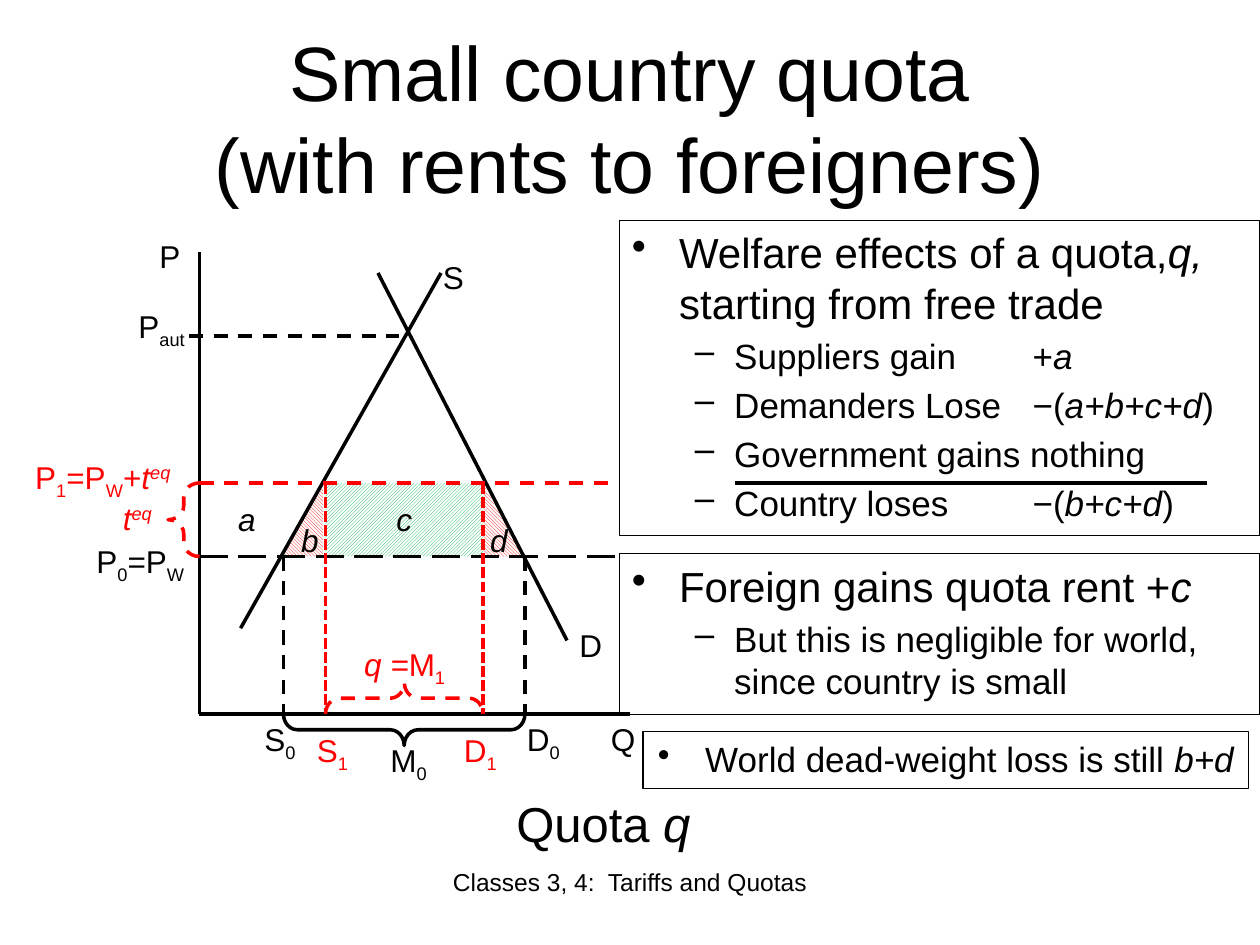
from lxml.etree import SubElement
from pptx import Presentation
from pptx.dml.color import RGBColor
from pptx.enum.dml import MSO_LINE, MSO_PATTERN
from pptx.enum.shapes import MSO_CONNECTOR, MSO_SHAPE
from pptx.enum.text import MSO_ANCHOR, MSO_AUTO_SIZE, PP_ALIGN
from pptx.oxml.ns import qn
from pptx.util import Pt

BLACK, RED, GREEN, WHITE = "000000", "FF0000", "00B050", "FFFFFF"
FONT = "Arial"

# Diagram coordinates in points
AXIS_X, AXIS_Y = 114, 408
P_AUTARKY, P_QUOTA, P_WORLD = 192, 276, 318
S0, S1, D1, D0 = 162, 186, 276, 300

BASELINES = {"sub": "-25000", "sup": "30000"}


def colour(value):
    return RGBColor.from_string(value)


def format_paragraph(para, size, ink=BLACK, align=PP_ALIGN.LEFT):
    para.alignment = align
    para.font.name = FONT
    para.font.size = Pt(size)
    para.font.color.rgb = colour(ink)


def add_spans(para, spans):
    """Each span is plain text or (text, styles), styles being i, sub, sup."""
    for item in spans:
        text, styles = (item, "") if isinstance(item, str) else item
        span = para.add_run()
        span.text = text
        for style in styles.split():
            if style == "i":
                span.font.italic = True
            else:
                span._r.get_or_add_rPr().set("baseline", BASELINES[style])


def add_label(page, left, top, width, spans, ink=BLACK, size=18, align=PP_ALIGN.LEFT):
    box = page.shapes.add_textbox(Pt(left), Pt(top), Pt(width), Pt(size * 1.6))
    box.text_frame.word_wrap = True
    para = box.text_frame.paragraphs[0]
    format_paragraph(para, size, ink, align)
    add_spans(para, spans)


def add_line(page, x1, y1, x2, y2, ink=BLACK, dash=None):
    line = page.shapes.add_connector(MSO_CONNECTOR.STRAIGHT, Pt(x1), Pt(y1), Pt(x2), Pt(y2))
    line.line.color.rgb = colour(ink)
    line.line.width = Pt(2)
    if dash:
        line.line.dash_style = dash
    SubElement(line._element.spPr, qn("a:effectLst"))


def add_hatched(page, kind, left, width, ink, pattern, flip=False):
    """Welfare area between the world price and the quota price."""
    area = page.shapes.add_shape(kind, Pt(left), Pt(P_QUOTA), Pt(width), Pt(P_WORLD - P_QUOTA))
    area.shadow.inherit = False
    area.fill.patterned()
    area.fill.pattern = pattern
    area.fill.fore_color.rgb = colour(ink)
    area.fill.back_color.rgb = colour(WHITE)
    area.line.fill.background()
    if flip:
        area._element.spPr.find(qn("a:xfrm")).set("flipH", "1")


def add_brace(page, centre_x, centre_y, span, rotation=0, ink=BLACK, dash=None):
    depth = 18
    brace = page.shapes.add_shape(MSO_SHAPE.LEFT_BRACE, Pt(centre_x - depth / 2),
                                  Pt(centre_y - span / 2), Pt(depth), Pt(span))
    brace.shadow.inherit = False
    brace.rotation = rotation
    brace.adjustments[0] = 0.44
    brace.fill.background()
    brace.line.color.rgb = colour(ink)
    brace.line.width = Pt(2)
    if dash:
        brace.line.dash_style = dash


def set_bullet(para, level):
    margin, hang, mark = ((27, 27, "•"), (58.5, 22.5, "–"))[level]
    properties = para._p.get_or_add_pPr()
    properties.set("marL", str(Pt(margin)))
    properties.set("indent", str(-Pt(hang)))
    bullet = properties.makeelement(qn("a:buChar"), {"char": mark})
    tabs = properties.makeelement(qn("a:tabLst"), {})
    SubElement(tabs, qn("a:tab"), pos=str(Pt(229)), algn="l")
    # Schema order: bullet and tabs come before the default run properties
    defaults = properties.find(qn("a:defRPr"))
    defaults.addprevious(bullet)
    defaults.addprevious(tabs)


def add_bullet_box(page, left, top, width, height, items, align=PP_ALIGN.LEFT):
    """Items are (level, size, spans)."""
    box = page.shapes.add_textbox(Pt(left), Pt(top), Pt(width), Pt(height))
    box.line.color.rgb = colour(BLACK)
    box.line.width = Pt(0.75)
    frame = box.text_frame
    frame.word_wrap = True
    for index, (level, size, spans) in enumerate(items):
        para = frame.add_paragraph() if index else frame.paragraphs[0]
        para.level = level
        para.space_before = Pt(size * 0.2)
        format_paragraph(para, size, align=align)
        set_bullet(para, level)
        add_spans(para, spans)


def add_title(page):
    title = page.shapes.title
    title.left, title.top, title.width, title.height = Pt(36), Pt(21.6), Pt(648), Pt(90)
    frame = title.text_frame
    frame.text = "Small country quota\v(with rents to foreigners)"
    frame.auto_size = MSO_AUTO_SIZE.NONE
    frame.vertical_anchor = MSO_ANCHOR.MIDDLE
    format_paragraph(frame.paragraphs[0], 44, align=PP_ALIGN.CENTER)


def draw_diagram(page):
    # Hatched welfare areas
    down, up = MSO_PATTERN.DARK_DOWNWARD_DIAGONAL, MSO_PATTERN.DARK_UPWARD_DIAGONAL
    add_hatched(page, MSO_SHAPE.RECTANGLE, S1, D1 - S1, GREEN, up)
    add_hatched(page, MSO_SHAPE.RIGHT_TRIANGLE, D1, 22.5, RED, down)
    add_hatched(page, MSO_SHAPE.RIGHT_TRIANGLE, S0, 22.5, RED, down, flip=True)

    # Axes, supply and demand
    add_line(page, AXIS_X, AXIS_Y, 360, AXIS_Y)
    add_line(page, AXIS_X, AXIS_Y, AXIS_X, 144)
    add_line(page, 137.5, 359, 252, 156)
    add_line(page, 324, 366, 216, 156)

    # Price and quantity guides
    add_line(page, 108, P_AUTARKY, 228, P_AUTARKY, dash=MSO_LINE.DASH)
    add_line(page, AXIS_X, P_WORLD, 354, P_WORLD, dash=MSO_LINE.LONG_DASH)
    add_line(page, AXIS_X, P_QUOTA, 348, P_QUOTA, RED, MSO_LINE.DASH)
    for x in (S0, D0):
        add_line(page, x, P_WORLD, x, AXIS_Y, dash=MSO_LINE.DASH)
    for x in (S1, D1):
        add_line(page, x, P_QUOTA, x, AXIS_Y, RED, MSO_LINE.SQUARE_DOT)

    # Braces for imports and the equivalent tariff
    add_brace(page, (S0 + D0) / 2, AXIS_Y + 9, D0 - S0, 270)
    add_brace(page, (S1 + D1) / 2, AXIS_Y - 9, D1 - S1, 90, RED, MSO_LINE.DASH)
    add_brace(page, AXIS_X - 9, (P_QUOTA + P_WORLD) / 2, P_WORLD - P_QUOTA, 0, RED, MSO_LINE.DASH)

    # Labels
    for left, top, width, spans in (
        (84, 132, 54, ["P"]),
        (246, 144, 54, ["S"]),
        (324, 354, 30, ["D"]),
        (342, 408, 54, ["Q"]),
        (72, 172, 54, ["P", ("aut", "sub")]),
        (48, 306, 72, ["P", ("0", "sub"), "=P", ("W", "sub")]),
        (144, 408, 36, ["S", ("0", "sub")]),
        (294, 408, 36, ["D", ("0", "sub")]),
        (216, 420, 40, ["M", ("0", "sub")]),
    ):
        add_label(page, left, top, width, spans)
    for left, top, width, spans in (
        (174, 414, 36, ["S", ("1", "sub")]),
        (258, 414, 36, ["D", ("1", "sub")]),
        (201, 365, 78, [("q =", "i"), "M", ("1", "sub")]),
        (13, 258, 101, ["P", ("1", "sub"), "=P", ("W", "sub"), "+", ("t", "i"), ("eq", "i sup")]),
    ):
        add_label(page, left, top, width, spans, RED)
    add_label(page, 57.5, 281.5, 42, [("t", "i"), ("eq", "i sup")], RED, align=PP_ALIGN.CENTER)
    for left, top, name in ((114, 282, "a"), (150, 294, "b"), (204, 282, "c"), (258, 294, "d")):
        add_label(page, left, top, 54, [(name, "i")], align=PP_ALIGN.CENTER)


def main():
    deck = Presentation()
    deck.slide_width, deck.slide_height = Pt(720), Pt(540)
    page = deck.slides.add_slide(deck.slide_layouts[5])
    add_title(page)
    draw_diagram(page)

    # Welfare text
    add_bullet_box(page, 354, 126, 366, 180, [
        (0, 24, ["Welfare effects of a quota,", ("q,", "i"), " starting from free trade"]),
        (1, 20, ["Suppliers gain\t+", ("a", "i")]),
        (1, 20, ["Demanders Lose\t−(", ("a+b+c+d", "i"), ")"]),
        (1, 20, ["Government gains nothing"]),
        (1, 20, ["Country loses\t−(", ("b+c+d", "i"), ")"]),
    ])
    add_line(page, 420, 276, 690, 276)
    add_bullet_box(page, 354, 316.5, 366, 92, [
        (0, 24, ["Foreign gains quota rent +", ("c", "i")]),
        (1, 20, ["But this is negligible for world, since country is small"]),
    ])
    add_bullet_box(page, 367.5, 418, 346, 32.5, [
        (0, 20, ["World dead-weight loss is still ", ("b+d", "i")]),
    ], PP_ALIGN.CENTER)

    # Caption and footer
    add_label(page, 288, 450, 116, ["Quota ", ("q", "i")], size=28)
    add_label(page, 246, 492, 228, ["Classes 3, 4:  Tariffs and Quotas"], size=14,
              align=PP_ALIGN.CENTER)
    deck.save("out.pptx")


if __name__ == "__main__":
    main()
